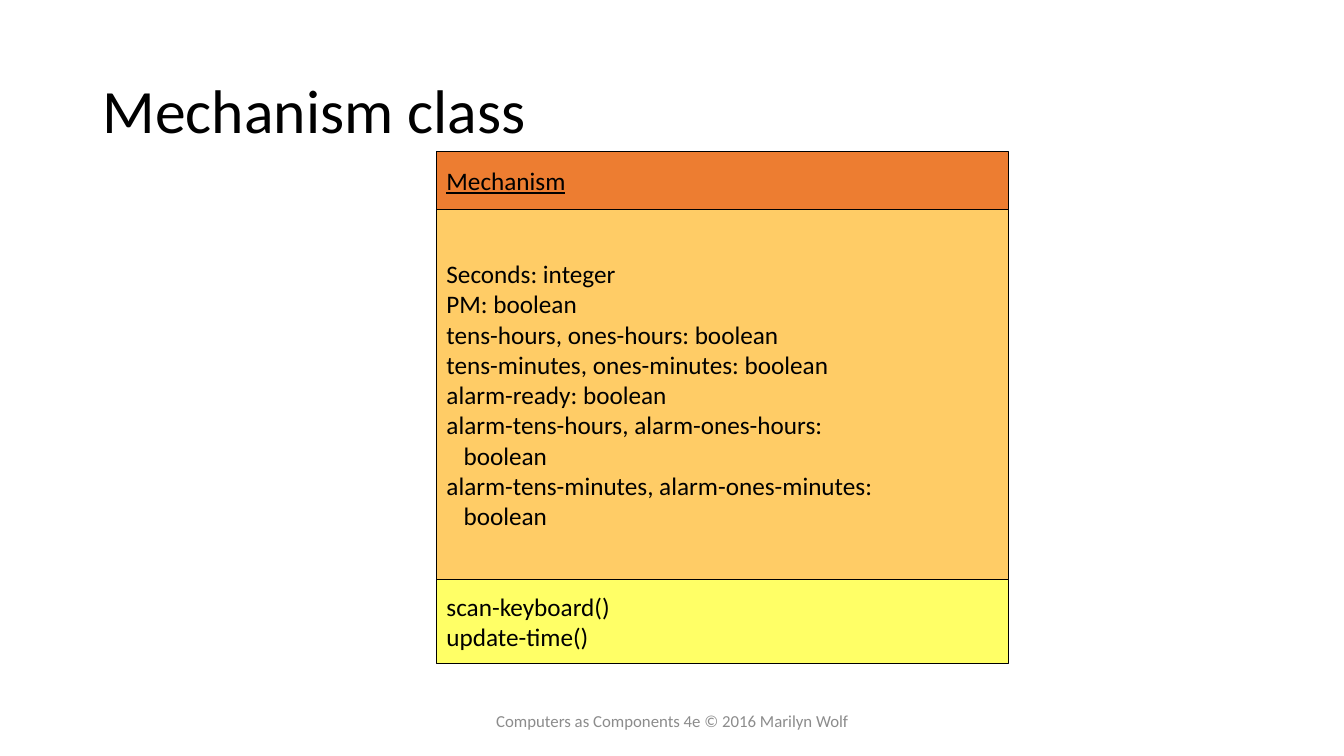
from dataclasses import dataclass

from pptx import Presentation
from pptx.dml.color import RGBColor
from pptx.enum.shapes import MSO_SHAPE
from pptx.enum.text import MSO_ANCHOR, PP_ALIGN
from pptx.slide import Slide
from pptx.text.text import TextFrame
from pptx.util import Inches, Pt

RECTANGLE = MSO_SHAPE.RECTANGLE
MIDDLE = MSO_ANCHOR.MIDDLE
LEFT, CENTER = PP_ALIGN.LEFT, PP_ALIGN.CENTER

FONT = "Calibri"
COLORS = {
    "text": "000000",
    "footer": "8C8C8C",
    "name": "ED7D31",
    "attributes": "FFCC66",
    "operations": "FFFF66",
}
CLASS_LEFT, CLASS_TOP, CLASS_WIDTH = 4.33, 1.5, 5.67
CONTINUATION_INDENT = 0.17


@dataclass(frozen=True)
class Line:
    text: str
    size: int = 18
    color: str = "text"
    align: PP_ALIGN = LEFT
    underline: bool = False
    indent: float = 0
    spacing: float = 1.0


@dataclass(frozen=True)
class Compartment:
    fill: str
    height: float
    lines: list[Line]


BOOLEAN_CONTINUATION = Line("boolean", indent=CONTINUATION_INDENT)
MECHANISM_CLASS = [
    Compartment("name", 0.58, [Line("Mechanism", underline=True)]),
    Compartment("attributes", 3.67, [
        Line("Seconds: integer"),
        Line("PM: boolean"),
        Line("tens-hours, ones-hours: boolean"),
        Line("tens-minutes, ones-minutes: boolean"),
        Line("alarm-ready: boolean"),
        Line("alarm-tens-hours, alarm-ones-hours:"),
        BOOLEAN_CONTINUATION,
        Line("alarm-tens-minutes, alarm-ones-minutes:"),
        BOOLEAN_CONTINUATION,
    ]),
    Compartment("operations", 0.83, [Line("scan-keyboard()"), Line("update-time()")]),
]


def rgb(name: str) -> RGBColor:
    return RGBColor.from_string(COLORS[name])


def write_lines(frame: TextFrame, lines: list[Line]) -> None:
    frame.word_wrap = True
    frame.vertical_anchor = MIDDLE
    for index, line in enumerate(lines):
        para = frame.add_paragraph() if index else frame.paragraphs[0]
        para.alignment = line.align
        para.line_spacing = line.spacing
        if line.indent:
            para._p.get_or_add_pPr().set("marL", str(Inches(line.indent)))
        span = para.add_run()
        span.text = line.text
        span.font.name = FONT
        span.font.size = Pt(line.size)
        span.font.color.rgb = rgb(line.color)
        if line.underline:
            span.font.underline = True


def add_label(page: Slide, left: float, top: float, width: float, height: float,
              line: Line) -> None:
    box = page.shapes.add_textbox(Inches(left), Inches(top), Inches(width), Inches(height))
    write_lines(box.text_frame, [line])


def add_class(page: Slide, compartments: list[Compartment]) -> None:
    """Stack the compartments of a class diagram from top to bottom."""
    top = CLASS_TOP
    for compartment in compartments:
        box = page.shapes.add_shape(RECTANGLE, Inches(CLASS_LEFT), Inches(top),
                                    Inches(CLASS_WIDTH), Inches(compartment.height))
        box.shadow.inherit = False
        box.fill.solid()
        box.fill.fore_color.rgb = rgb(compartment.fill)
        box.line.color.rgb = rgb("text")
        box.line.width = Pt(0.75)
        write_lines(box.text_frame, compartment.lines)
        top += compartment.height


def main() -> None:
    deck = Presentation()
    deck.slide_width, deck.slide_height = Inches(13.33), Inches(7.5)
    page = deck.slides.add_slide(deck.slide_layouts[6])
    add_label(page, 0.92, 0.4, 11.5, 1.45, Line("Mechanism class", size=44, spacing=0.9))
    add_class(page, MECHANISM_CLASS)
    add_label(page, 4.42, 6.95, 4.5, 0.4,
              Line("Computers as Components 4e © 2016 Marilyn Wolf",
                   size=12, color="footer", align=CENTER))
    deck.save("out.pptx")


if __name__ == "__main__":
    main()
